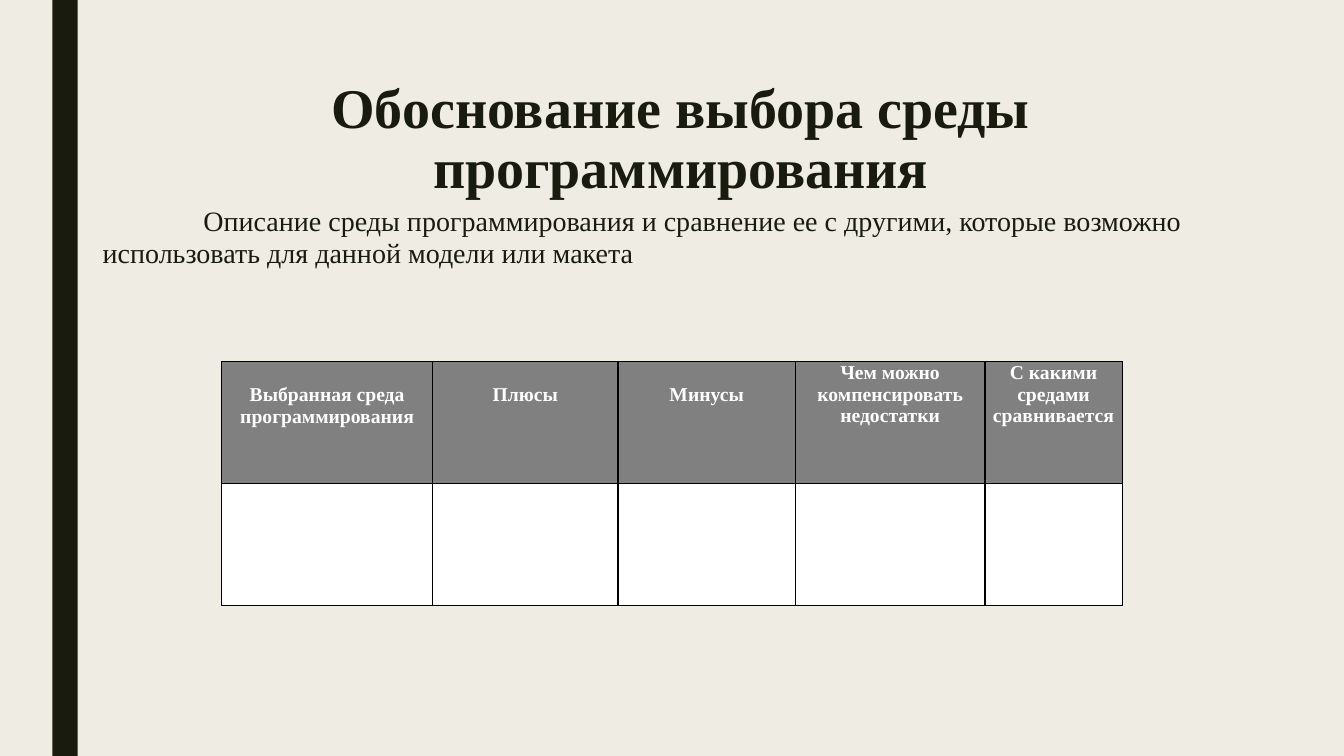
"""Build the slide on the choice of a programming environment."""
from lxml import etree
from pptx import Presentation
from pptx.dml.color import RGBColor
from pptx.enum.shapes import MSO_SHAPE
from pptx.enum.text import PP_ALIGN
from pptx.oxml.ns import qn
from pptx.util import Inches, Pt

COLORS = {"bg": "EFEDE3", "dark": "191B0E", "head": "808080",
          "white": "FFFFFF", "border": "000000"}
FONT = "Times New Roman"
HEADERS = [("Выбранная среда программирования", 2.09, 0.22),
           ("Плюсы", 1.84, 0.22),
           ("Минусы", 1.76, 0.22),
           ("Чем можно компенсировать недостатки", 1.88, 0),
           ("С какими средами сравнивается", 1.36, 0)]
ROW_HEIGHT = 1.21


def write(tf, text, size, color, bold=False, align=PP_ALIGN.LEFT):
    tf.word_wrap = True
    p = tf.paragraphs[0]
    p.text = text
    p.alignment = align
    font = p.runs[0].font
    font.name, font.size, font.bold = FONT, Pt(size), bold
    font.color.rgb = RGBColor.from_string(COLORS[color])
    return p


def style_cell(cell, fill):
    cell.fill.solid()
    cell.fill.fore_color.rgb = RGBColor.from_string(COLORS[fill])
    tc_pr = cell._tc.get_or_add_tcPr()
    for i, side in enumerate(("lnL", "lnR", "lnT", "lnB")):
        ln = etree.Element(qn(f"a:{side}"), w=str(Pt(1)))
        solid = etree.SubElement(ln, qn("a:solidFill"))
        etree.SubElement(solid, qn("a:srgbClr"), val=COLORS["border"])
        tc_pr.insert(i, ln)


prs = Presentation()
prs.slide_width, prs.slide_height = Inches(13.33), Inches(7.5)
s = prs.slides.add_slide(prs.slide_layouts[6])
s.background.fill.solid()
s.background.fill.fore_color.rgb = RGBColor.from_string(COLORS["bg"])

bar = s.shapes.add_shape(MSO_SHAPE.RECTANGLE, Inches(0.52), 0, Inches(0.25), Inches(7.5))
bar.shadow.inherit = False
bar.fill.solid()
bar.fill.fore_color.rgb = RGBColor.from_string(COLORS["dark"])
bar.line.fill.background()

title = s.shapes.add_textbox(Inches(1.5), Inches(0.75), Inches(10.5), Inches(1.62))
p = write(title.text_frame, "Обоснование выбора среды программирования", 40, "dark",
          True, PP_ALIGN.CENTER)
p.line_spacing = 0.89

body = s.shapes.add_textbox(Inches(0.92), Inches(2), Inches(11.5), Inches(1.45))
p = write(body.text_frame, "Описание среды программирования и сравнение ее с другими, "
          "которые возможно использовать для данной модели или макета", 20, "dark")
p.line_spacing = 0.94
p._p.get_or_add_pPr().set("indent", str(Inches(1)))

table = s.shapes.add_table(2, len(HEADERS), Inches(2.2), Inches(3.59),
                           Inches(8.93), Inches(2 * ROW_HEIGHT)).table
for row in table.rows:
    row.height = Inches(ROW_HEIGHT)
for col, (text, width, top) in enumerate(HEADERS):
    table.columns[col].width = Inches(width)
    head = table.cell(0, col)
    head.margin_left = head.margin_right = Inches(0.03)
    head.margin_top, head.margin_bottom = Inches(top), 0
    write(head.text_frame, text, 14, "white", True, PP_ALIGN.CENTER)
    style_cell(head, "head")
    style_cell(table.cell(1, col), "white")

prs.save("out.pptx")
